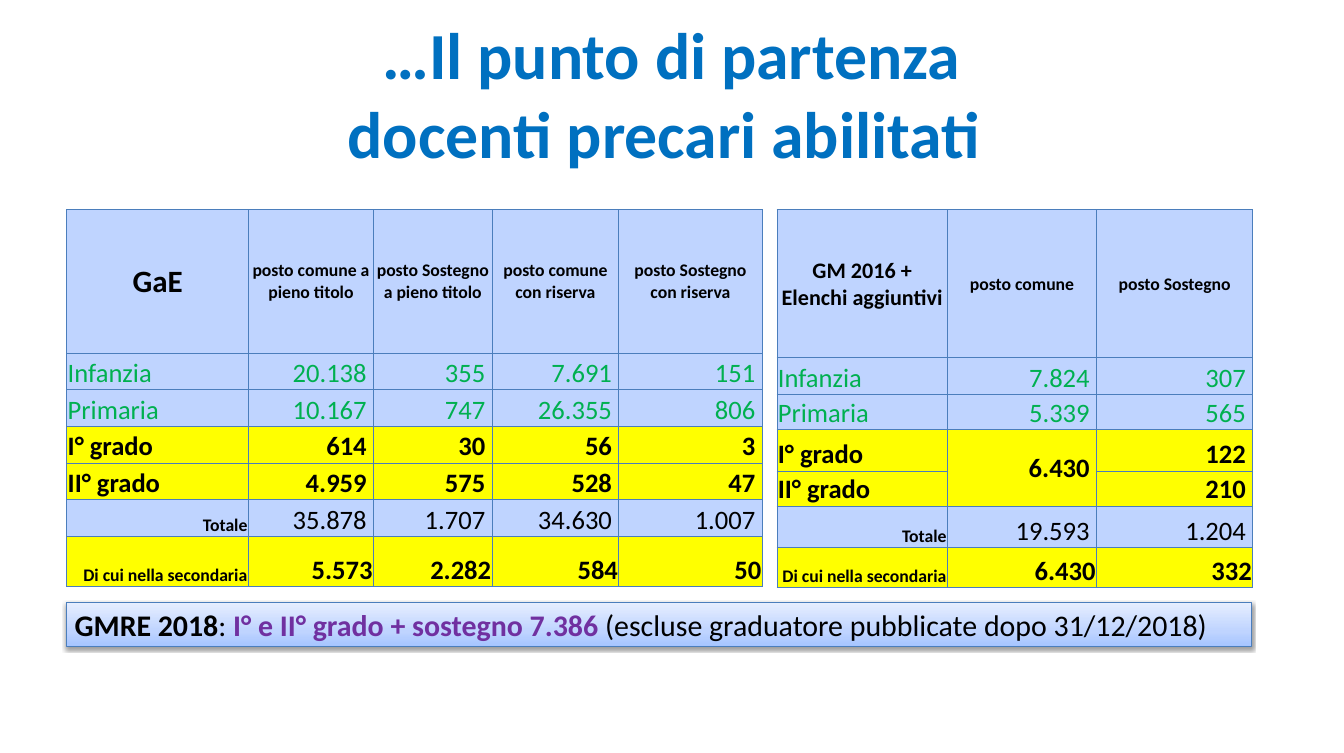
from copy import deepcopy

from lxml.etree import SubElement
from pptx import Presentation
from pptx.dml.color import RGBColor
from pptx.enum.shapes import MSO_SHAPE as SHAPE
from pptx.enum.text import MSO_ANCHOR as ANCHOR, MSO_AUTO_SIZE as AUTO, PP_ALIGN as ALIGN
from pptx.oxml.ns import qn
from pptx.util import Cm, Pt

BLACK = RGBColor(0x00, 0x00, 0x00)
TITLE_BLUE = RGBColor(0x00, 0x70, 0xC0)
BORDER_BLUE = RGBColor(0x4B, 0x7E, 0xBC)
DEEP_BLUE = RGBColor(0xA4, 0xC4, 0xFF)
CELL_BLUE = RGBColor(0xBF, 0xD4, 0xFF)
PALE_BLUE = RGBColor(0xE6, 0xEE, 0xFF)
GREEN = RGBColor(0x00, 0xB0, 0x50)
PURPLE = RGBColor(0x70, 0x30, 0xA0)
YELLOW = RGBColor(0xFF, 0xFF, 0x00)

LEFT = 2.13
TABLE_TOP = 6.68
ROW_LABELS = ["Infanzia", "Primaria", "I° grado", "II° grado", "Totale", "Di cui nella secondaria"]
ROW_STYLES = [
    dict(color=GREEN, bold=False, fill=CELL_BLUE),
    dict(color=GREEN, bold=False, fill=CELL_BLUE),
    dict(color=BLACK, bold=True, fill=YELLOW),
    dict(color=BLACK, bold=True, fill=YELLOW),
    dict(color=BLACK, bold=False, fill=CELL_BLUE, summary=True),
    dict(color=BLACK, bold=True, fill=YELLOW, summary=True, pad=0.03),
]
GAE_HEADS = ["GaE", "posto comune a pieno titolo", "posto Sostegno a pieno titolo",
             "posto comune con riserva", "posto Sostegno con riserva"]
GAE_VALUES = [
    ["20.138", "355", "7.691", "151"],
    ["10.167", "747", "26.355", "806"],
    ["614", "30", "56", "3"],
    ["4.959", "575", "528", "47"],
    ["35.878", "1.707", "34.630", "1.007"],
    ["5.573", "2.282", "584", "50"],
]
GM_HEADS = ["GM 2016 + Elenchi aggiuntivi", "posto comune", "posto Sostegno"]
GM_VALUES = [
    ["7.824", "307"],
    ["5.339", "565"],
    ["6.430", "122"],
    ["", "210"],
    ["19.593", "1.204"],
    ["6.430", "332"],
]


class Deck:
    font = "Calibri"

    def __init__(self, width, height):
        self.prs = Presentation()
        self.prs.slide_width, self.prs.slide_height = Cm(width), Cm(height)
        self.s = self.prs.slides.add_slide(self.prs.slide_layouts[6])

    def style(self, r, size, color=BLACK, bold=False):
        for name, value in dict(name=self.font, size=Pt(size), bold=bold).items():
            setattr(r.font, name, value)
        r.font.color.rgb = color

    def title(self, x, y, w, h, text):
        tf = self.s.shapes.add_textbox(Cm(x), Cm(y), Cm(w), Cm(h)).text_frame
        for name, value in dict(word_wrap=True, vertical_anchor=ANCHOR.MIDDLE).items():
            setattr(tf, name, value)
        p = tf.paragraphs[0]
        p.text, p.alignment = text, ALIGN.CENTER
        for r in p.runs:
            self.style(r, 59.4, TITLE_BLUE, True)

    def borders(self, cell):
        tc_pr = cell._tc.get_or_add_tcPr()
        for side in "LRTB":
            ln = SubElement(tc_pr, qn(f"a:ln{side}"), w=str(Pt(0.75)))
            fill = SubElement(ln, qn("a:solidFill"))
            SubElement(fill, qn("a:srgbClr"), val=str(BORDER_BLUE))

    def cell(self, cell, text, fill, size, color, bold, align, anchor, pad=0.03):
        self.borders(cell)
        cell.fill.solid()
        cell.fill.fore_color.rgb = fill
        margins = dict(margin_left=Cm(0.03), margin_right=Cm(pad), margin_top=Cm(0.03),
                       margin_bottom=0, vertical_anchor=anchor)
        for name, value in margins.items():
            setattr(cell, name, value)
        if text:
            p = cell.text_frame.paragraphs[0]
            p.alignment = align
            r = p.add_run()
            r.text = text
            self.style(r, size, color, bold)

    def table(self, x, widths, heights, heads, values, corner_size):
        frame = self.s.shapes.add_table(len(heights), len(widths), Cm(x), Cm(TABLE_TOP),
                                        Cm(sum(widths)), Cm(sum(heights)))
        table = frame.table
        table.first_row = table.horz_banding = False
        for column, width in zip(table.columns, widths):
            column.width = Cm(width)
        for row, height in zip(table.rows, heights):
            row.height = Cm(height)
        for j, head in enumerate(heads):
            self.cell(table.cell(0, j), head, CELL_BLUE, 16 if j else corner_size,
                      BLACK, True, ALIGN.CENTER, ANCHOR.MIDDLE)
        for i, (label, numbers, look) in enumerate(zip(ROW_LABELS, values, ROW_STYLES), 1):
            fill, color, summary = look["fill"], look["color"], look.get("summary", False)
            self.cell(table.cell(i, 0), label, fill, 16 if summary else 24, color,
                      summary or look["bold"], ALIGN.RIGHT if summary else ALIGN.LEFT,
                      ANCHOR.BOTTOM)
            for j, number in enumerate(numbers, 1):
                self.cell(table.cell(i, j), number, fill, 24, color, look["bold"],
                          ALIGN.RIGHT, ANCHOR.BOTTOM, look.get("pad", 0.22))
        return table

    def banner(self, x, y, w, h, parts):
        sp = self.s.shapes.add_shape(SHAPE.RECTANGLE, Cm(x), Cm(y), Cm(w), Cm(h))
        sp.fill.gradient()
        sp.fill.gradient_angle = 90
        stop_list = sp._element.spPr.find(".//" + qn("a:gsLst"))
        stop_list.append(deepcopy(stop_list[0]))
        stops = [(0, DEEP_BLUE), (0.35, CELL_BLUE), (1, PALE_BLUE)]
        for stop, (position, color) in zip(sp.fill.gradient_stops, stops):
            stop.position, stop.color.rgb = position, color
        sp.line.color.rgb, sp.line.width = BORDER_BLUE, Pt(0.75)
        self.drop_shadow(sp)
        tf = sp.text_frame
        for name, value in dict(word_wrap=True, auto_size=AUTO.SHAPE_TO_FIT_TEXT).items():
            setattr(tf, name, value)
        p = tf.paragraphs[0]
        p.alignment = ALIGN.LEFT
        for text, color, bold in parts:
            r = p.add_run()
            r.text = text
            self.style(r, 27, color, bold)

    def drop_shadow(self, sp):
        sp.shadow.inherit = False
        effects = sp._element.spPr.find(qn("a:effectLst"))
        shadow = SubElement(effects, qn("a:outerShdw"), blurRad=str(Pt(3.1)),
                            dist=str(Pt(1.6)), dir="5400000", rotWithShape="0")
        color = SubElement(shadow, qn("a:srgbClr"), val=str(BLACK))
        SubElement(color, qn("a:alpha"), val="38000")


def main():
    deck = Deck(42.85, 24)
    deck.title(LEFT, 0.97, 38.56, 3.99, "…Il punto di partenza\vdocenti precari abilitati ")
    deck.table(LEFT, [5.79, 3.99, 3.78, 4.04, 4.57], [4.57] + [1.17] * 5 + [1.6],
               GAE_HEADS, GAE_VALUES, 28)
    gm = deck.table(24.77, [5.44, 4.75, 4.98], [4.72, 1.17, 1.12, 1.32, 1.12, 1.32, 1.27],
                    GM_HEADS, GM_VALUES, 20)
    shared = gm.cell(3, 1)
    shared.merge(gm.cell(4, 1))
    shared.vertical_anchor = ANCHOR.MIDDLE
    deck.banner(LEFT, 19.2, 37.77, 1.42, [
        ("GMRE 2018", BLACK, True),
        (": ", BLACK, False),
        ("I° e II° grado + sostegno 7.386 ", PURPLE, True),
        ("(escluse graduatore pubblicate dopo 31/12/2018)", BLACK, False),
    ])
    deck.prs.save("out.pptx")


if __name__ == "__main__":
    main()
